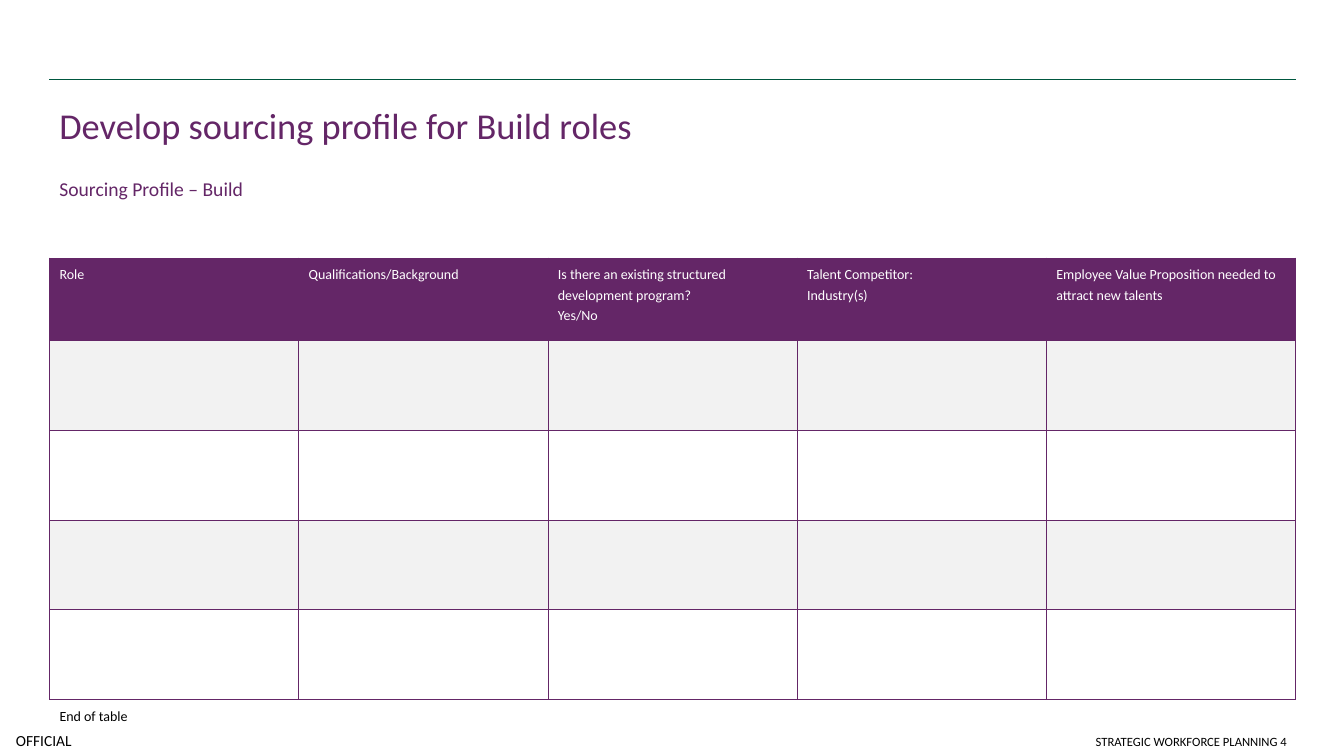
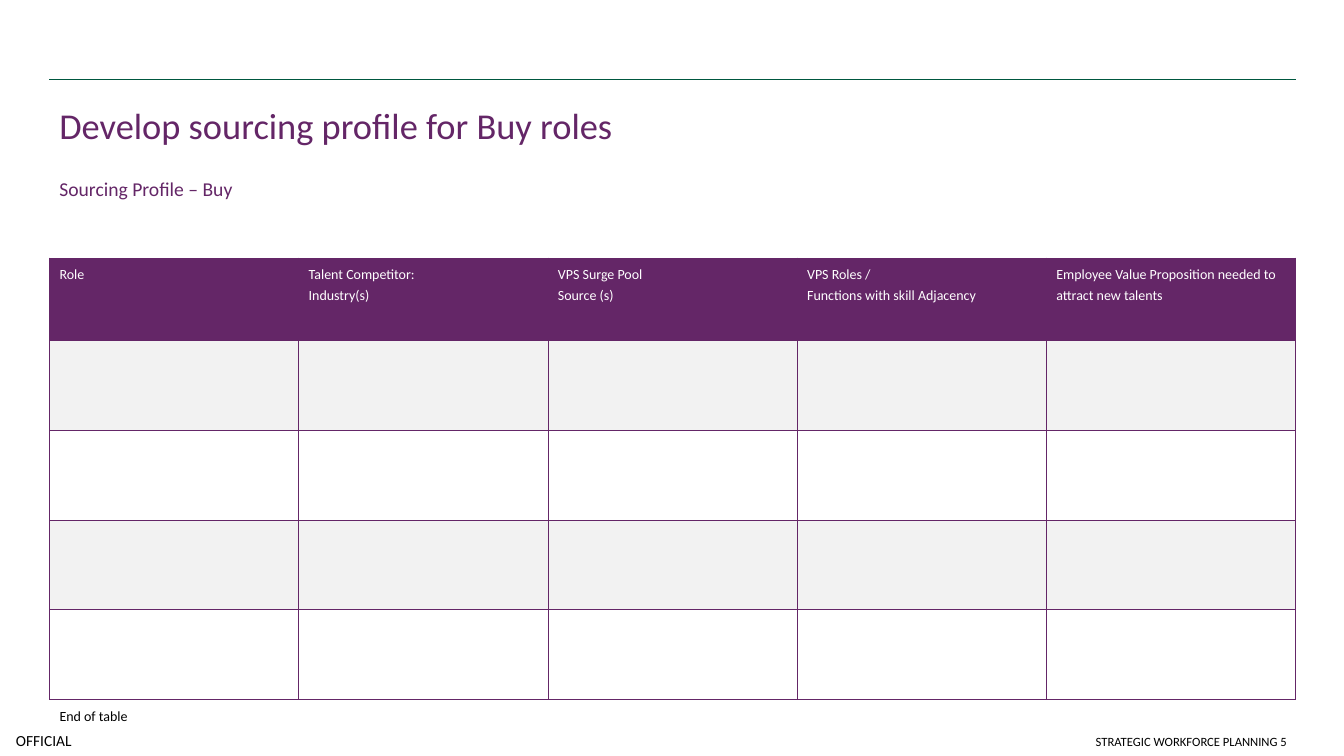
from lxml import etree
from pptx import Presentation
from pptx.dml.color import RGBColor
from pptx.enum.shapes import MSO_CONNECTOR
from pptx.enum.text import MSO_ANCHOR, PP_ALIGN
from pptx.oxml.ns import qn
from pptx.util import Inches, Pt

STRAIGHT = MSO_CONNECTOR.STRAIGHT
TOP, MIDDLE, BOTTOM = MSO_ANCHOR.TOP, MSO_ANCHOR.MIDDLE, MSO_ANCHOR.BOTTOM
LEFT, CENTER, RIGHT = PP_ALIGN.LEFT, PP_ALIGN.CENTER, PP_ALIGN.RIGHT

FONT = "Calibri"
PURPLE, GREEN, GREY, WHITE, BLACK = "642667", "00573F", "F2F2F2", "FFFFFF", "000000"
MARGIN, CONTENT_WIDTH = 0.49, 12.36
ROW_HEIGHTS = [0.82] + [0.89] * 4 + [0.31]
TABLE_TEXT_SIZE = 10
LINE_SPACING = 1.2
ALL_SIDES = ("L", "R", "T", "B")

VALUE_PROPOSITION = "Employee Value Proposition needed to attract new talents"
# A vertical tab is a line break inside one paragraph.
PROFILES = [
    ("Build", 4, [
        "Role",
        "Qualifications/Background",
        "Is there an existing structured development program?\vYes/No",
        "Talent Competitor:\nIndustry(s)",
        VALUE_PROPOSITION,
    ]),
    ("Buy", 5, [
        "Role",
        "Talent Competitor:\vIndustry(s)",
        "VPS Surge Pool\nSource (s)",
        "VPS Roles /\vFunctions with skill Adjacency",
        VALUE_PROPOSITION,
    ]),
]


def color(hex_value):
    return RGBColor.from_string(hex_value)


def write(frame, text, size, hex_value, align=LEFT, spacing=None):
    frame.text = text
    for para in frame.paragraphs:
        para.alignment = align
        para.line_spacing = spacing
        for span in para.runs:
            span.font.name = FONT
            span.font.size = Pt(size)
            span.font.bold = False
            span.font.color.rgb = color(hex_value)


def add_text(page, box, text, size, hex_value, align=LEFT, anchor=TOP, spacing=None):
    frame = page.shapes.add_textbox(*map(Inches, box)).text_frame
    frame.word_wrap = True
    frame.vertical_anchor = anchor
    write(frame, text, size, hex_value, align, spacing)


def add_rule(page, left, top, width):
    rule = page.shapes.add_connector(
        STRAIGHT, Inches(left), Inches(top), Inches(left + width), Inches(top))
    rule.line.color.rgb = color(GREEN)
    rule.line.width = Pt(1)
    etree.SubElement(rule._element.spPr, qn("a:effectLst"))


def set_borders(cell, visible_sides):
    """Draw thin purple lines on the visible sides and none on the others."""
    properties = cell._tc.get_or_add_tcPr()
    for side in ALL_SIDES:
        line = etree.SubElement(properties, qn(f"a:ln{side}"), w=str(Pt(0.5)))
        if side in visible_sides:
            fill = etree.SubElement(line, qn("a:solidFill"))
            etree.SubElement(fill, qn("a:srgbClr"), val=PURPLE)
        else:
            etree.SubElement(line, qn("a:noFill"))


def fill_cell(cell, text, text_color, background, sides):
    if text:
        write(cell.text_frame, text, TABLE_TEXT_SIZE, text_color, spacing=LINE_SPACING)
    else:
        # Keeps an empty cell from stretching its row.
        etree.SubElement(cell.text_frame.paragraphs[0]._p, qn("a:endParaRPr"),
                         sz=str(TABLE_TEXT_SIZE * 100))
    set_borders(cell, sides)
    cell.fill.solid()
    cell.fill.fore_color.rgb = color(background)


def add_profile_table(page, left, top, width, headings):
    last_row, column_count = len(ROW_HEIGHTS) - 1, len(headings)
    table = page.shapes.add_table(
        len(ROW_HEIGHTS), column_count, Inches(left), Inches(top),
        Inches(width), Inches(sum(ROW_HEIGHTS))).table
    table.horz_banding = False
    for column in table.columns:
        column.width = Inches(width / column_count)
    for row_index, height in enumerate(ROW_HEIGHTS):
        table.rows[row_index].height = Inches(height)
        for column_index, heading in enumerate(headings):
            text, text_color, sides = "", BLACK, ALL_SIDES
            background = GREY if row_index % 2 else WHITE
            if row_index == 0:
                text, text_color, background = heading, WHITE, PURPLE
            elif row_index == last_row:
                text = "End of table" if column_index == 0 else ""
                background, sides = WHITE, ("T",)
            fill_cell(table.cell(row_index, column_index), text, text_color,
                      background, sides)


def add_frame(page, title, number):
    """Add the rule, title and footers that every slide shares."""
    add_rule(page, MARGIN, 0.79, CONTENT_WIDTH)
    add_text(page, (MARGIN, 0.89, CONTENT_WIDTH, 1.02), title, 26, PURPLE,
             spacing=LINE_SPACING)
    add_text(page, (0, 7.19, 0.87, 0.31), "OFFICIAL", 11, BLACK, CENTER, MIDDLE)
    add_text(page, (6.84, 7.09, 6.02, 0.39), f"STRATEGIC WORKFORCE PLANNING {number}",
             9, BLACK, RIGHT, BOTTOM)


def add_profile_slide(deck, strategy, number, headings):
    page = deck.slides.add_slide(deck.slide_layouts[6])
    add_frame(page, f"Develop sourcing profile for {strategy} roles", number)
    add_text(page, (MARGIN, 1.48, CONTENT_WIDTH, 0.79), f"Sourcing Profile – {strategy}",
             14, PURPLE, anchor=MIDDLE)
    add_profile_table(page, MARGIN, 2.56, CONTENT_WIDTH, headings)


def main():
    deck = Presentation()
    deck.slide_width, deck.slide_height = Inches(13.33), Inches(7.5)
    for profile in PROFILES:
        add_profile_slide(deck, *profile)
    deck.save("out.pptx")


if __name__ == "__main__":
    main()
